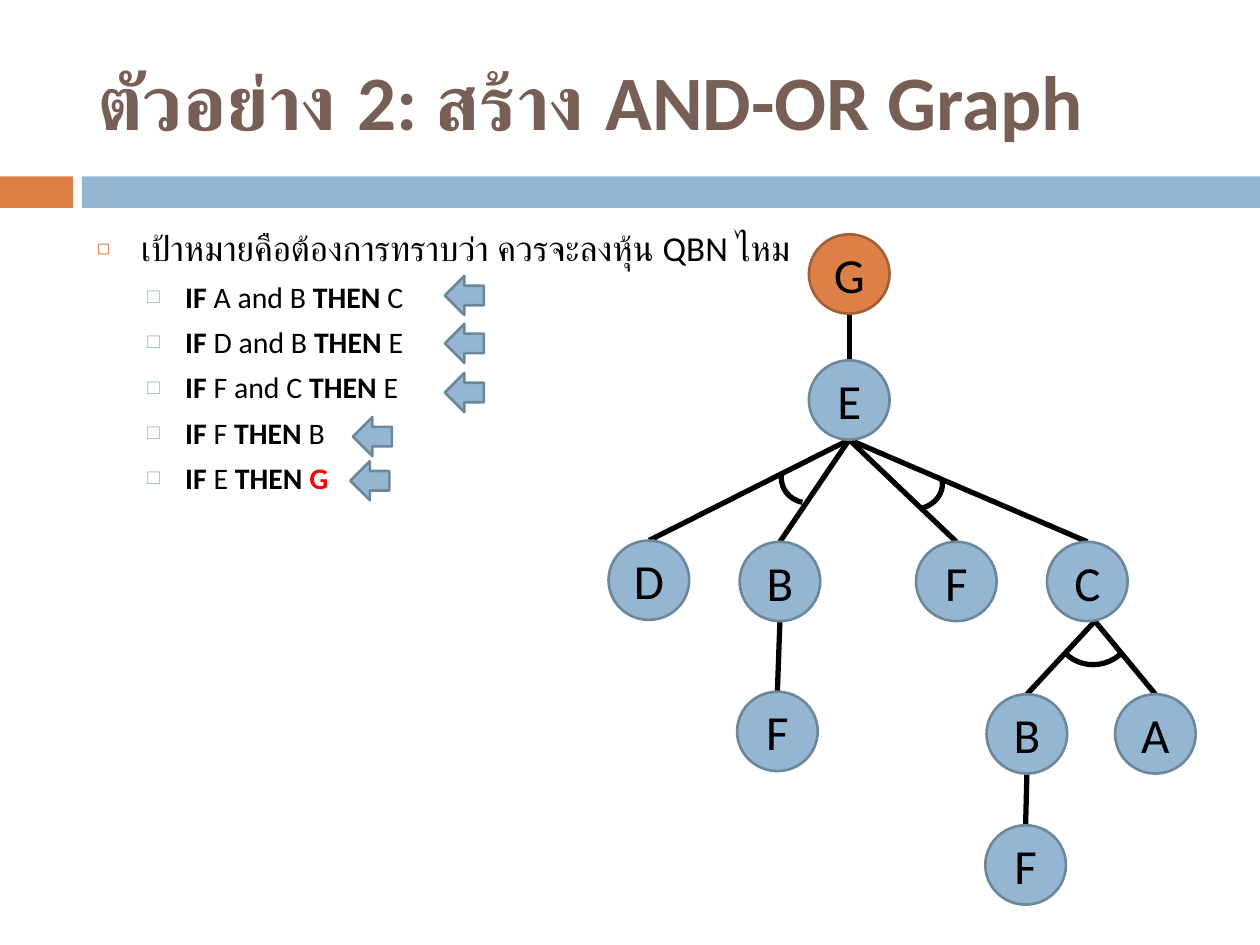
"""Build a slide that turns IF-THEN rules into an AND-OR graph."""
from lxml import etree
from pptx import Presentation
from pptx.dml.color import RGBColor
from pptx.enum.shapes import MSO_CONNECTOR, MSO_SHAPE
from pptx.enum.text import MSO_ANCHOR, MSO_AUTO_SIZE, PP_ALIGN
from pptx.oxml.ns import qn
from pptx.util import Inches, Pt

RECTANGLE, ELLIPSE = MSO_SHAPE.RECTANGLE, MSO_SHAPE.OVAL
ARROW, ARC = MSO_SHAPE.RIGHT_ARROW, MSO_SHAPE.ARC
STRAIGHT = MSO_CONNECTOR.STRAIGHT
MIDDLE, TOP = MSO_ANCHOR.MIDDLE, MSO_ANCHOR.TOP
LEFT, CENTER = PP_ALIGN.LEFT, PP_ALIGN.CENTER
NO_FIT = MSO_AUTO_SIZE.NONE

FONT = "Calibri"
BLACK = RGBColor(0, 0, 0)
RED = RGBColor(0xFF, 0, 0)
BROWN = RGBColor(0x77, 0x5F, 0x55)
ORANGE = RGBColor(0xDD, 0x80, 0x47)
DARK_ORANGE = RGBColor(0xA3, 0x5F, 0x35)
BLUE = RGBColor(0x94, 0xB6, 0xD2)
DARK_BLUE = RGBColor(0x6D, 0x87, 0x9B)

TITLE = "ตัวอย่าง 2: สร้าง AND-OR Graph"
GOAL = "เป้าหมายคือต้องการทราบว่า ควรจะลงหุ้น QBN ไหม"
RULES = [
    ("A and B", "C", BLACK),
    ("D and B", "E", BLACK),
    ("F and C", "E", BLACK),
    ("F", "B", BLACK),
    ("E", "G", RED),
]
BARS = [(0, 0.58, ORANGE), (0.65, 9.35, BLUE)]
RULE_ARROWS = [(3.53, 2.19), (3.53, 2.57), (3.53, 2.96), (2.8, 3.31), (2.78, 3.66)]
ARROW_SIZE = 0.31

NODE_WIDTH, NODE_HEIGHT = 0.64, 0.63
NODES = {
    "goal": ("G", 6.42, 1.86),
    "E": ("E", 6.42, 2.86),
    "D": ("D", 4.83, 4.29),
    "B left": ("B", 5.87, 4.3),
    "F middle": ("F", 7.27, 4.3),
    "C": ("C", 8.31, 4.3),
    "F left": ("F", 5.85, 5.49),
    "B right": ("B", 7.83, 5.51),
    "A": ("A", 8.85, 5.51),
    "F right": ("F", 7.82, 6.55),
}
CHILDREN = {
    "goal": ["E"],
    "E": ["D", "B left", "F middle", "C"],
    "B left": ["F left"],
    "C": ["B right", "A"],
    "B right": ["F right"],
}
BRANCH_SHIFT = {"C": 0.06}
AND_ARCS = [
    (6.2, 3.6, 0.41, 0.39, 191.1),
    (7.08, 3.64, 0.37, 0.43, 79.6),
    (8.36, 4.64, 0.65, 0.63, 135.1),
]


def add_span(para, text, size=17, color=BLACK, bold=False):
    span = para.add_run()
    span.text = text
    span.font.name = FONT
    span.font.size = Pt(size)
    span.font.bold = bold
    span.font.color.rgb = color


def set_bullet(para, character, color, percent, margin, hanging, before):
    para.alignment = LEFT
    para.space_before = Pt(before)
    properties = para._p.get_or_add_pPr()
    properties.set("marL", str(Inches(margin)))
    properties.set("indent", str(-Inches(hanging)))
    bullet_color = etree.SubElement(properties, qn("a:buClr"))
    etree.SubElement(bullet_color, qn("a:srgbClr"), val=str(color))
    etree.SubElement(properties, qn("a:buSzPct"), val=str(percent * 1000))
    etree.SubElement(properties, qn("a:buChar"), char=character)


def place(shape, left, top, width, height):
    shape.left, shape.top = Inches(left), Inches(top)
    shape.width, shape.height = Inches(width), Inches(height)


def add_figure(page, kind, box, fill=None, line=None, weight=1.5, rotation=0):
    shape = page.shapes.add_shape(kind, *map(Inches, box))
    shape.shadow.inherit = False
    shape.rotation = rotation
    if fill is None:
        shape.fill.background()
    else:
        shape.fill.solid()
        shape.fill.fore_color.rgb = fill
    if line is None:
        shape.line.fill.background()
    else:
        shape.line.color.rgb = line
        shape.line.width = Pt(weight)
    return shape


def add_branch(page, parent, child):
    _, parent_left, parent_top = NODES[parent]
    _, child_left, child_top = NODES[child]
    start = parent_left + NODE_WIDTH / 2 + BRANCH_SHIFT.get(parent, 0)
    end = child_left + NODE_WIDTH / 2
    points = (start, parent_top + NODE_HEIGHT, end, child_top)
    branch = page.shapes.add_connector(STRAIGHT, *map(Inches, points))
    branch.line.color.rgb = BLACK
    branch.line.width = Pt(3)
    etree.SubElement(branch._element.spPr, qn("a:effectLst"))


def fill_text(page):
    title, body = page.placeholders[0], page.placeholders[1]
    place(title, 0.67, 0.25, 8.92, 1.08)
    place(body, 0.67, 1.75, 8.92, 4.92)
    for holder, anchor in ((title, MIDDLE), (body, TOP)):
        holder.text_frame.auto_size = NO_FIT
        holder.text_frame.vertical_anchor = anchor
    heading = title.text_frame.paragraphs[0]
    heading.alignment = LEFT
    add_span(heading, TITLE, size=44, color=BROWN, bold=True)

    goal = body.text_frame.paragraphs[0]
    set_bullet(goal, "◻", ORANGE, 60, margin=0.35, hanging=0.35, before=7)
    add_span(goal, GOAL, size=20)
    for condition, result, color in RULES:
        para = body.text_frame.add_paragraph()
        para.level = 1
        set_bullet(para, "□", BLUE, 70, margin=0.7, hanging=0.3, before=5.5)
        add_span(para, "IF", bold=True)
        add_span(para, f" {condition} ")
        add_span(para, "THEN ", bold=True)
        add_span(para, result, color=color, bold=color == RED)


def draw_graph(page):
    for parent, children in CHILDREN.items():
        for child in children:
            add_branch(page, parent, child)
    for *box, rotation in AND_ARCS:
        add_figure(page, ARC, box, line=BLACK, weight=3, rotation=rotation)
    for name, (label, left, top) in NODES.items():
        fill, line = (ORANGE, DARK_ORANGE) if name == "goal" else (BLUE, DARK_BLUE)
        box = (left, top, NODE_WIDTH, NODE_HEIGHT)
        node = add_figure(page, ELLIPSE, box, fill, line)
        node.text_frame.vertical_anchor = MIDDLE
        para = node.text_frame.paragraphs[0]
        para.alignment = CENTER
        add_span(para, label, size=28)


def main():
    deck = Presentation()
    deck.slide_width, deck.slide_height = Inches(10), Inches(7.5)
    page = deck.slides.add_slide(deck.slide_layouts[1])
    fill_text(page)
    for left, width, color in BARS:
        add_figure(page, RECTANGLE, (left, 1.4, width, 0.25), color)
    for left, top in RULE_ARROWS:
        box = (left, top, ARROW_SIZE, ARROW_SIZE)
        add_figure(page, ARROW, box, BLUE, DARK_BLUE, rotation=180)
    draw_graph(page)
    deck.save("out.pptx")


if __name__ == "__main__":
    main()
